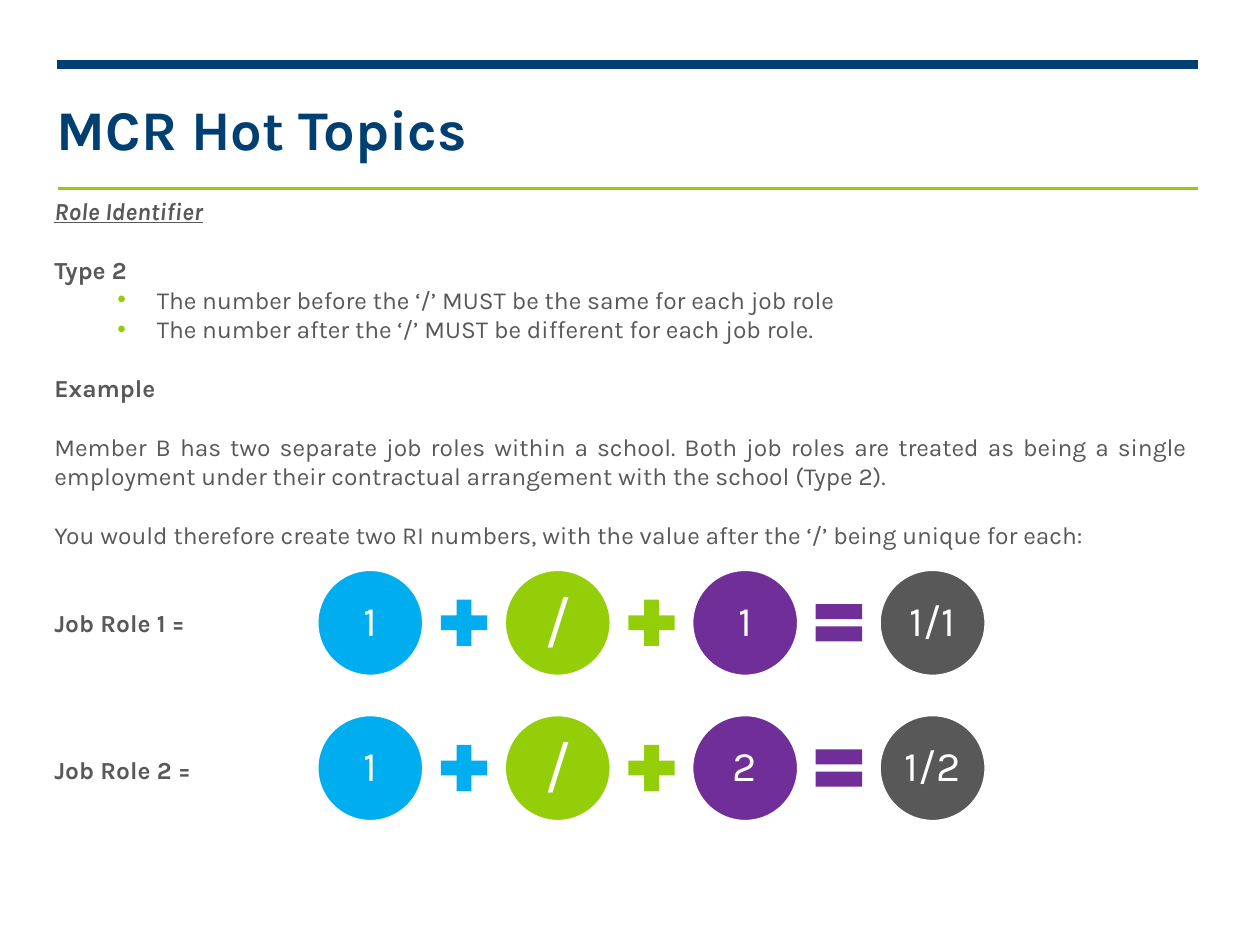
from dataclasses import dataclass

from lxml import etree
from pptx import Presentation
from pptx import util as u
from pptx.dml.color import RGBColor
from pptx.enum import shapes, text
from pptx.oxml.ns import qn

Pt = u.Pt
SHAPE = shapes.MSO_SHAPE
ALIGN = text.PP_ALIGN
ANCHOR = text.MSO_ANCHOR


@dataclass(frozen=True)
class Theme:
    font: str = "Karla"
    navy: str = "003F72"
    green: str = "94CE09"
    blue: str = "00AEEF"
    purple: str = "702E99"
    grey: str = "585858"
    white: str = "FFFFFF"
    title: int = 32
    body: int = 14
    digit: int = 24
    slash: int = 36
    line: float = 16.8  # height of one body line


class Deck:
    def __init__(self, prs, theme):
        self.theme = theme
        self.s = prs.slides.add_slide(prs.slide_layouts[6])
        self.shapes = self.s.shapes

    def group(self):
        """Return a group on the slide that shapes can be added to."""
        return self.s.shapes.add_group_shape().shapes

    def add_text(self, p, words, size, color, **fmt):
        r = p.add_run()
        r.text = words
        r.font.color.rgb = RGBColor.from_string(color)
        for name, value in {"name": self.theme.font, "size": Pt(size), **fmt}.items():
            setattr(r.font, name, value)

    def frame(self, sp, inset, anchor):
        tf = sp.text_frame
        values = {"word_wrap": True, "vertical_anchor": anchor}
        for side, value in zip(("left", "top", "right", "bottom"), inset):
            values["margin_" + side] = Pt(value)
        for name, value in values.items():
            setattr(tf, name, value)
        return tf

    def textbox(self, box, inset=(7.2, 3.6, 7.2, 3.6), anchor=ANCHOR.TOP):
        sp = self.shapes.add_textbox(*map(Pt, box))
        return self.frame(sp, inset, anchor)

    def shape(self, kind, box, fill, line=0, parent=None):
        sp = (parent or self.shapes).add_shape(kind, *map(Pt, box))
        sp.shadow.inherit = False
        sp.fill.solid()
        sp.fill.fore_color.rgb = RGBColor.from_string(fill)
        if line:
            sp.line.color.rgb = RGBColor.from_string(self.theme.white)
            sp.line.width = Pt(line)
        else:
            sp.line.fill.background()
        return sp

    def circle(self, box, fill, words, size, parent):
        sp = self.shape(SHAPE.OVAL, box, fill, 2, parent)
        p = self.frame(sp, (2, 2, 2, 2), ANCHOR.MIDDLE).paragraphs[0]
        p.alignment = ALIGN.CENTER
        p.line_spacing = 0.9
        self.add_text(p, words, size, self.theme.white)

    def bullet(self, p):
        pPr = p._p.get_or_add_pPr()
        pPr.set("marL", str(Pt(58.5)))
        pPr.set("indent", str(Pt(-22.5)))
        color = etree.SubElement(pPr, qn("a:buClr"))
        etree.SubElement(color, qn("a:srgbClr"), val=self.theme.green)
        etree.SubElement(pPr, qn("a:buFont"), typeface="Arial")
        etree.SubElement(pPr, qn("a:buChar"), char="•")

    def body(self, box, items):
        """Each item is (words, blank lines above, is bullet, font format)."""
        tf = self.textbox(box)
        for i, (words, gap, bulleted, fmt) in enumerate(items):
            p = tf.add_paragraph() if i else tf.paragraphs[0]
            p.alignment = ALIGN.LEFT if bulleted else ALIGN.JUSTIFY
            p.space_before = Pt(gap * self.theme.line)
            if bulleted:
                p.level = 1
                self.bullet(p)
            self.add_text(p, words, self.theme.body, self.theme.grey, **fmt)


def main():
    th = Theme()
    prs = Presentation()
    prs.slide_width, prs.slide_height = Pt(720), Pt(540)
    deck = Deck(prs, th)

    # Title between two rules
    deck.shape(SHAPE.RECTANGLE, (32.5, 34, 652.3, 5.6), th.navy, 0.75)
    deck.shape(SHAPE.RECTANGLE, (33, 106.3, 652, 2.6), th.green, 0.75)
    tf = deck.textbox((32.5, 53.5, 648, 38.8), (0, 0, 0, 0), ANCHOR.BOTTOM)
    deck.add_text(tf.paragraphs[0], "MCR Hot Topics", th.title, th.navy, bold=True)

    # Explanation and row labels
    bold = {"bold": True}
    deck.body((24, 108.7, 662, 363.6), [
        ("Role Identifier", 0, False, {"bold": True, "italic": True, "underline": True}),
        ("Type 2", 1, False, bold),
        ("The number before the ‘/’ MUST be the same for each job role", 0, True, {}),
        ("The number after the ‘/’ MUST be different for each job role.", 0, True, {}),
        ("Example", 1, False, bold),
        ("Member B has two separate job roles within a school. Both job roles are "
         "treated as being a single employment under their contractual arrangement "
         "with the school (Type 2).", 1, False, {}),
        ("You would therefore create two RI numbers, with the value after the ‘/’ "
         "being unique for each:", 1, False, {}),
        ("Job Role 1 =", 2, False, bold),
        ("Job Role 2 =", 4, False, bold),
    ])

    # Equations: one group of circles and operators per job role
    left, top, step, row_step = 181, 325.3, 107.1, 83
    dia, sign, sign_dx = 61.2, 36, 66.2
    plus, equal = SHAPE.MATH_PLUS, SHAPE.MATH_EQUAL
    for row, role in enumerate("12"):
        parent = deck.group()
        y = top + row * row_step
        terms = [
            ("1", th.blue, th.digit, plus),
            ("/", th.green, th.slash, plus),
            (role, th.purple, th.digit, equal),
            ("1/" + role, th.grey, th.digit, None),
        ]
        for col, (words, color, size, operator) in enumerate(terms):
            x = left + col * step
            deck.circle((x, y, dia, dia), color, words, size, parent)
            if operator:
                box = (x + sign_dx, y + (dia - sign) / 2, sign, sign)
                deck.shape(operator, box, color, parent=parent)

    prs.save("out.pptx")


if __name__ == "__main__":
    main()
